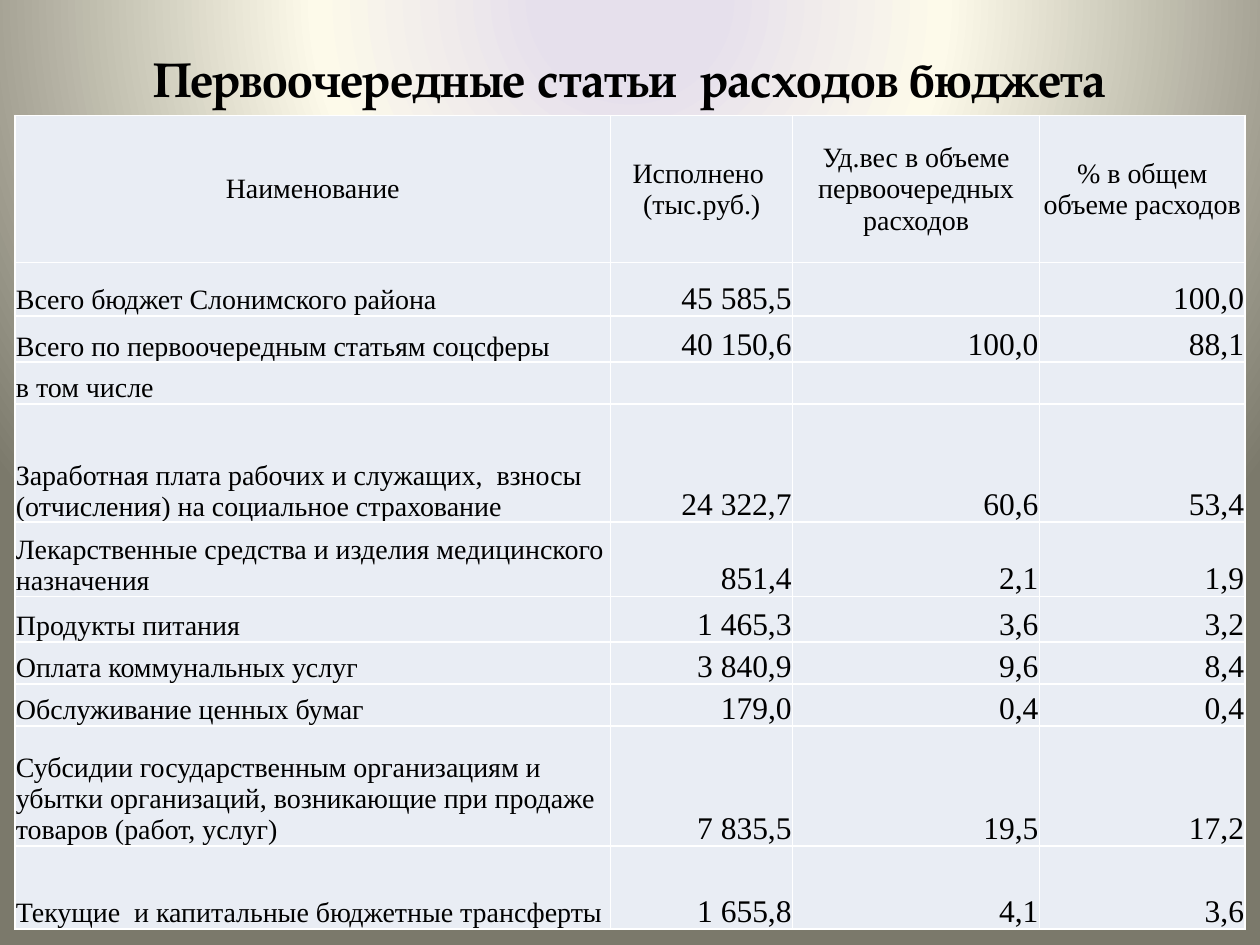
from lxml import etree
from pptx import Presentation, util as u
from pptx.dml.color import RGBColor
from pptx.enum import text
from pptx.oxml import parse_xml
from pptx.oxml.ns import qn

COLORS = {"text": "000000", "cell": "E9EDF4", "border": "FFFFFF",
          "center": "E6E0EC", "cream": "FDFAEA", "edge": "7B796B"}
LEFT, CENTER, RIGHT = text.PP_ALIGN.LEFT, text.PP_ALIGN.CENTER, text.PP_ALIGN.RIGHT
MIDDLE, BOTTOM = text.MSO_ANCHOR.MIDDLE, text.MSO_ANCHOR.BOTTOM

HEADER = ["Наименование", "Исполнено  (тыс.руб.)",
          "Уд.вес в объеме первоочередных расходов", "% в общем объеме расходов"]
EXPENSES = [
    ["Всего бюджет Слонимского района", "45 585,5", "", "100,0"],
    ["Всего по первоочередным статьям соцсферы", "40 150,6", "100,0", "88,1"],
    ["в том числе", "", "", ""],
    ["Заработная плата рабочих и служащих,  взносы (отчисления) на социальное страхование",
     "24 322,7", "60,6", "53,4"],
    ["Лекарственные средства и изделия медицинского назначения", "851,4", "2,1", "1,9"],
    ["Продукты питания", "1 465,3", "3,6", "3,2"],
    ["Оплата коммунальных услуг", "3 840,9", "9,6", "8,4"],
    ["Обслуживание ценных бумаг", "179,0", "0,4", "0,4"],
    ["Субсидии государственным организациям и убытки организаций, возникающие при продаже "
     "товаров (работ, услуг)", "7 835,5", "19,5", "17,2"],
    ["Текущие  и капитальные бюджетные трансферты", "1 655,8", "4,1", "3,6"],
]
COLUMN_WIDTHS = [340.5, 104, 141, 117.5]
ROW_HEIGHTS = [84, 30.5, 26.5, 24, 67.5, 42.5, 26, 24, 24, 68.5, 47.5]


class SlideBuilder:
    title_font = "TeX Gyre Pagella"
    table_font = "Times New Roman"

    def __init__(self, slide):
        self.slide = slide

    def background(self, stops):
        """Circular gradient centred above the middle of the slide."""
        marks = "".join(f'<a:gs pos="{position * 1000}"><a:srgbClr val="{COLORS[name]}"/></a:gs>'
                        for position, name in stops)
        background = parse_xml(
            '<p:bg xmlns:p="http://schemas.openxmlformats.org/presentationml/2006/main" '
            'xmlns:a="http://schemas.openxmlformats.org/drawingml/2006/main"><p:bgPr>'
            f'<a:gradFill rotWithShape="1"><a:gsLst>{marks}</a:gsLst><a:path path="circle">'
            '<a:fillToRect l="50000" t="-80000" r="50000" b="180000"/></a:path></a:gradFill>'
            '<a:effectLst/></p:bgPr></p:bg>')
        self.slide.element.cSld.insert(0, background)

    def add_text(self, paragraph, words, font, size, align, bold=False):
        paragraph.alignment = align
        run = paragraph.add_run()
        run.text = words
        run.font.name, run.font.size, run.font.bold = font, u.Pt(size), bold
        run.font.color.rgb = RGBColor.from_string(COLORS["text"])

    def title(self, words, left, top, width, height):
        shape = self.slide.shapes.add_textbox(*map(u.Pt, (left, top, width, height)))
        frame = shape.text_frame
        frame.word_wrap = True
        frame.vertical_anchor = MIDDLE
        frame.margin_bottom = u.Pt(48)  # lifts the line clear of the table
        self.add_text(frame.paragraphs[0], words, self.title_font, 27.9, CENTER, bold=True)

    def borders(self, cell):
        properties = cell._tc.get_or_add_tcPr()
        for side in ("lnL", "lnR", "lnT", "lnB"):
            line = etree.SubElement(properties, qn(f"a:{side}"), w=str(u.Pt(1)))
            fill = etree.SubElement(line, qn("a:solidFill"))
            etree.SubElement(fill, qn("a:srgbClr"), val=COLORS["border"])

    def cell(self, cell, words, size, align, anchor):
        self.borders(cell)
        cell.fill.solid()
        cell.fill.fore_color.rgb = RGBColor.from_string(COLORS["cell"])
        cell.margin_left = cell.margin_right = cell.margin_top = u.Pt(0.6)
        cell.margin_bottom = 0
        cell.vertical_anchor = anchor
        if words:
            self.add_text(cell.text_frame.paragraphs[0], words, self.table_font, size, align)

    def table(self, left, top, widths, heights, header, rows):
        frame = self.slide.shapes.add_table(
            len(heights), len(widths),
            *map(u.Pt, (left, top, sum(widths), sum(heights))))
        table = frame.table
        table.first_row = table.horz_banding = False
        for column, width in zip(table.columns, widths):
            column.width = u.Pt(width)
        for row, height in zip(table.rows, heights):
            row.height = u.Pt(height)
        for column, words in enumerate(header):
            self.cell(table.cell(0, column), words, 16, CENTER, MIDDLE)
        for row, values in enumerate(rows, 1):
            for column, words in enumerate(values):
                size, align = (18, RIGHT) if column else (16, LEFT)
                self.cell(table.cell(row, column), words, size, align, BOTTOM)


def main():
    presentation = Presentation()
    presentation.slide_width, presentation.slide_height = u.Pt(720), u.Pt(540)
    builder = SlideBuilder(presentation.slides.add_slide(presentation.slide_layouts[6]))

    # Background and title
    builder.background([(11, "center"), (40, "cream"), (100, "edge")])
    builder.title("Первоочередные статьи  расходов бюджета", 36, 21.6, 648, 90)

    # Expense table
    builder.table(8.5, 66, COLUMN_WIDTHS, ROW_HEIGHTS, HEADER, EXPENSES)

    presentation.save("out.pptx")


if __name__ == "__main__":
    main()
